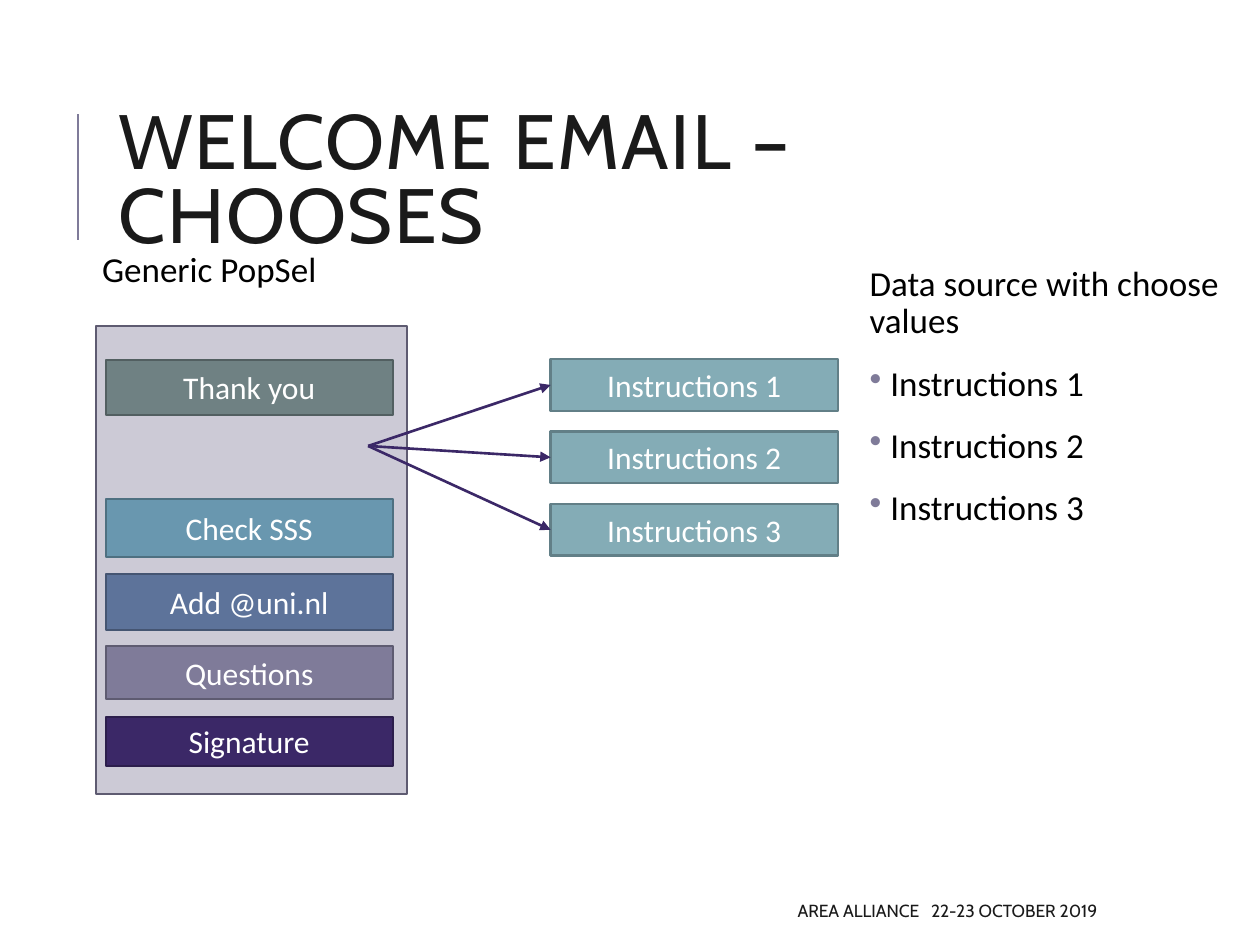
from lxml import etree
from pptx import Presentation
from pptx.dml.color import RGBColor
from pptx.enum.shapes import MSO_CONNECTOR, MSO_SHAPE
from pptx.enum.text import MSO_ANCHOR as Anchor, PP_ALIGN as Align
from pptx.oxml.ns import qn
from pptx.util import Cm, Pt

BLACK = RGBColor(0x00, 0x00, 0x00)
WHITE = RGBColor(0xFF, 0xFF, 0xFF)
INK = RGBColor(0x1A, 0x1A, 0x1A)
LAVENDER = RGBColor(0xCC, 0xCA, 0xD6)
MAUVE = RGBColor(0x7F, 0x7B, 0x99)
MAUVE_EDGE = RGBColor(0x5E, 0x5B, 0x71)
GREY_GREEN = RGBColor(0x6F, 0x81, 0x83)
GREY_GREEN_EDGE = RGBColor(0x52, 0x5F, 0x61)
TEAL = RGBColor(0x84, 0xAC, 0xB6)
TEAL_EDGE = RGBColor(0x62, 0x7F, 0x87)
SKY = RGBColor(0x69, 0x97, 0xAF)
SKY_EDGE = RGBColor(0x4E, 0x70, 0x81)
BLUE = RGBColor(0x5D, 0x73, 0x9A)
BLUE_EDGE = RGBColor(0x45, 0x55, 0x72)
PURPLE = RGBColor(0x3B, 0x28, 0x67)
PURPLE_EDGE = RGBColor(0x2C, 0x1E, 0x4C)

BLOCK_WIDTH = 5.79
BODY = dict(size=20, color=BLACK, before=12, after=2)


def write(paragraph, text, font="Calibri", size=18, color=WHITE, align=Align.LEFT,
          line_spacing=None, before=0, after=0, tracking=0):
    """Add a formatted run to a paragraph; tracking is in points."""
    paragraph.alignment = align
    paragraph.line_spacing = line_spacing
    paragraph.space_before = Pt(before)
    paragraph.space_after = Pt(after)
    run = paragraph.add_run()
    run.text = text
    run.font.name = font
    run.font.size = Pt(size)
    run.font.color.rgb = color
    if tracking:
        run.font._element.set("spc", str(int(tracking * 100)))


def add_bullet(paragraph, color, indent):
    properties = paragraph._p.get_or_add_pPr()
    properties.set("marL", str(indent))
    properties.set("indent", str(-indent))
    bullet_color = etree.SubElement(properties, qn("a:buClr"))
    etree.SubElement(bullet_color, qn("a:srgbClr"), val=str(color))
    etree.SubElement(properties, qn("a:buChar"), char="•")


def add_text_box(slide, left, top, width, height, anchor=Anchor.TOP, inset=None):
    box = slide.shapes.add_textbox(Cm(left), Cm(top), Cm(width), Cm(height))
    frame = box.text_frame
    frame.word_wrap = True
    frame.vertical_anchor = anchor
    if inset is not None:
        frame.margin_left = frame.margin_right = Cm(inset)
        frame.margin_top = frame.margin_bottom = Cm(inset)
    return frame


def add_block(slide, left, top, width, height, fill, edge, text=None):
    shape = slide.shapes.add_shape(MSO_SHAPE.RECTANGLE, Cm(left), Cm(top), Cm(width), Cm(height))
    shape.shadow.inherit = False
    shape.fill.solid()
    shape.fill.fore_color.rgb = fill
    shape.line.color.rgb = edge
    shape.line.width = Pt(1.25)
    if text:
        shape.text_frame.vertical_anchor = Anchor.MIDDLE
        write(shape.text_frame.paragraphs[0], text, align=Align.CENTER)
    return shape


def add_line(slide, start, end, color, target=None):
    """Draw a line; with a target it ends as an arrow at the target's left side."""
    line = slide.shapes.add_connector(MSO_CONNECTOR.STRAIGHT, *map(Cm, start + end))
    line.line.color.rgb = color
    line.line.width = Pt(1.5)
    if target is not None:
        line.end_connect(target, 1)
        etree.SubElement(line.line._get_or_add_ln(), qn("a:tailEnd"), type="triangle")
    etree.SubElement(line._element.spPr, qn("a:effectLst"))


def add_heading_and_footer(slide):
    add_line(slide, (1.57, 4.83), (1.57, 2.29), MAUVE)
    title = add_text_box(slide, 2.13, 1.63, 20.78, 4.17, Anchor.MIDDLE)
    write(title.paragraphs[0], "WELCOME EMAIL – CHOOSES", font="Cabin", size=44,
          color=INK, line_spacing=0.8, tracking=1)

    footer = add_text_box(slide, 10.08, 17.98, 12.29, 0.76, Anchor.MIDDLE)
    # The widened space separates the event from its date
    for text, tracking in (("AREA ALLIANCE", 0), (" ", 4.5), ("22-23 OCTOBER 2019", 0)):
        write(footer.paragraphs[0], text, font="Cabin", size=10, color=INK,
              align=Align.RIGHT, tracking=tracking)


def add_email_parts(slide):
    add_block(slide, 1.93, 6.58, 6.27, 9.42, LAVENDER, MAUVE_EDGE)
    parts = (
        ("Thank you", 7.25, 1.12, GREY_GREEN, GREY_GREEN_EDGE),
        ("Check SSS", 10.06, 1.17, SKY, SKY_EDGE),
        ("Add @uni.nl", 11.58, 1.12, BLUE, BLUE_EDGE),
        ("Questions", 13.03, 1.07, MAUVE, MAUVE_EDGE),
        ("Signature", 14.45, 0.99, PURPLE, PURPLE_EDGE),
    )
    for text, top, height, fill, edge in parts:
        add_block(slide, 2.13, top, BLOCK_WIDTH, height, fill, edge, text)


def add_choices(slide, choices):
    left, first_top, pitch, height = 11.1, 7.24, 1.46, 1.04
    for index, choice in enumerate(choices):
        top = first_top + index * pitch
        block = add_block(slide, left, top, BLOCK_WIDTH, height, TEAL, TEAL_EDGE, choice)
        add_line(slide, (7.42, 8.99), (left, top + height / 2), PURPLE, block)


def add_body_text(slide, choices):
    caption = add_text_box(slide, 1.93, 5.03, 20.32, 0.99, inset=0.13)
    write(caption.paragraphs[0], "Generic PopSel", line_spacing=0.8, **BODY)

    source = add_text_box(slide, 17.4, 5.23, 7.57, 6.53, inset=0.13)
    write(source.paragraphs[0], "Data source with choose values", line_spacing=0.9, **BODY)
    for choice in choices:
        paragraph = source.add_paragraph()
        write(paragraph, choice, line_spacing=0.9, **BODY)
        add_bullet(paragraph, MAUVE, Cm(0.42))


def main():
    presentation = Presentation()
    presentation.slide_width = Cm(25.4)
    presentation.slide_height = Cm(19.05)
    slide = presentation.slides.add_slide(presentation.slide_layouts[6])
    choices = [f"Instructions {number}" for number in range(1, 4)]

    add_heading_and_footer(slide)
    add_email_parts(slide)
    add_choices(slide, choices)
    add_body_text(slide, choices)
    presentation.save("out.pptx")


if __name__ == "__main__":
    main()
